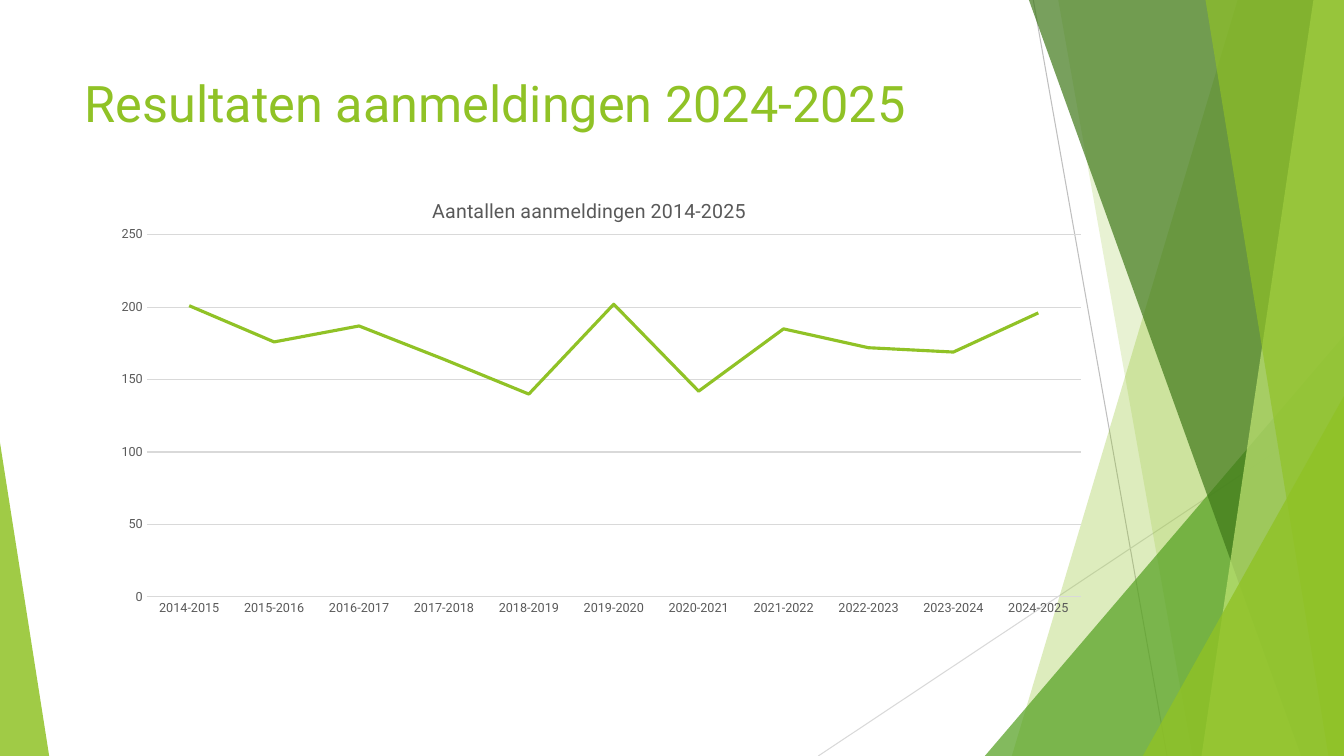
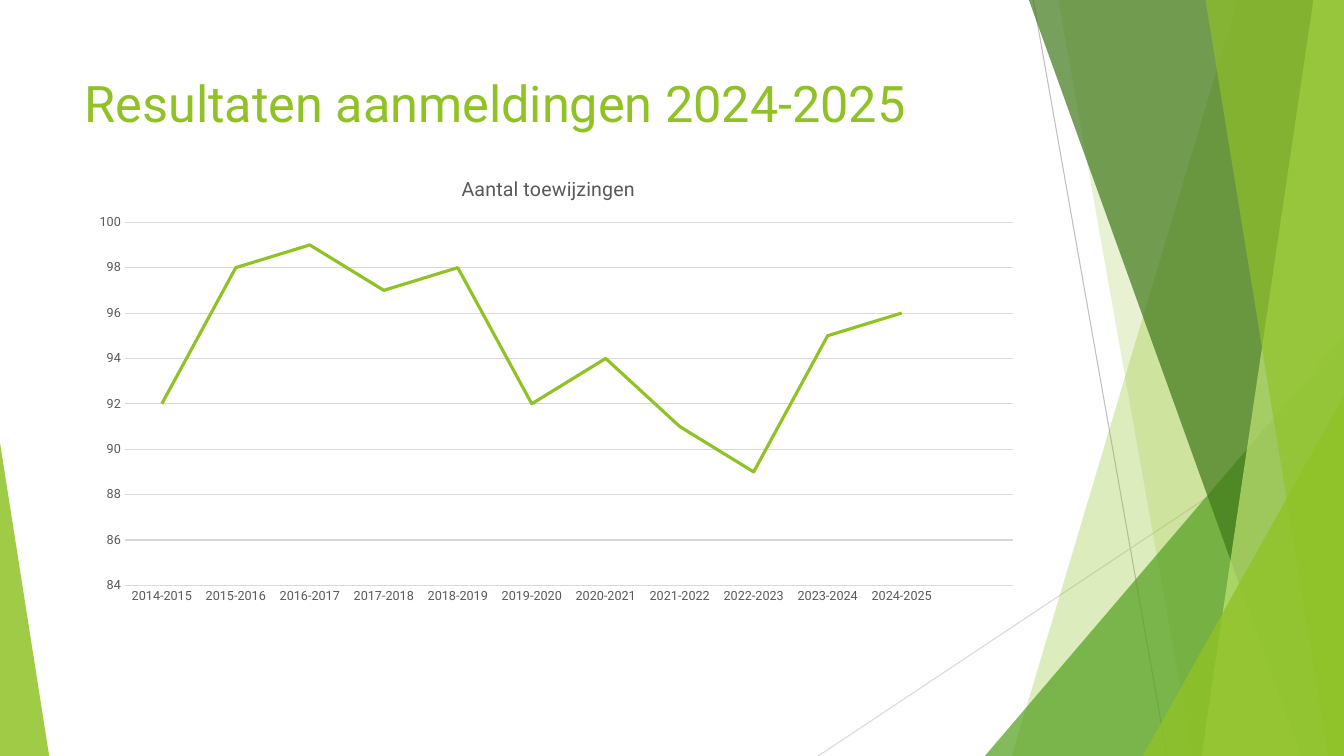
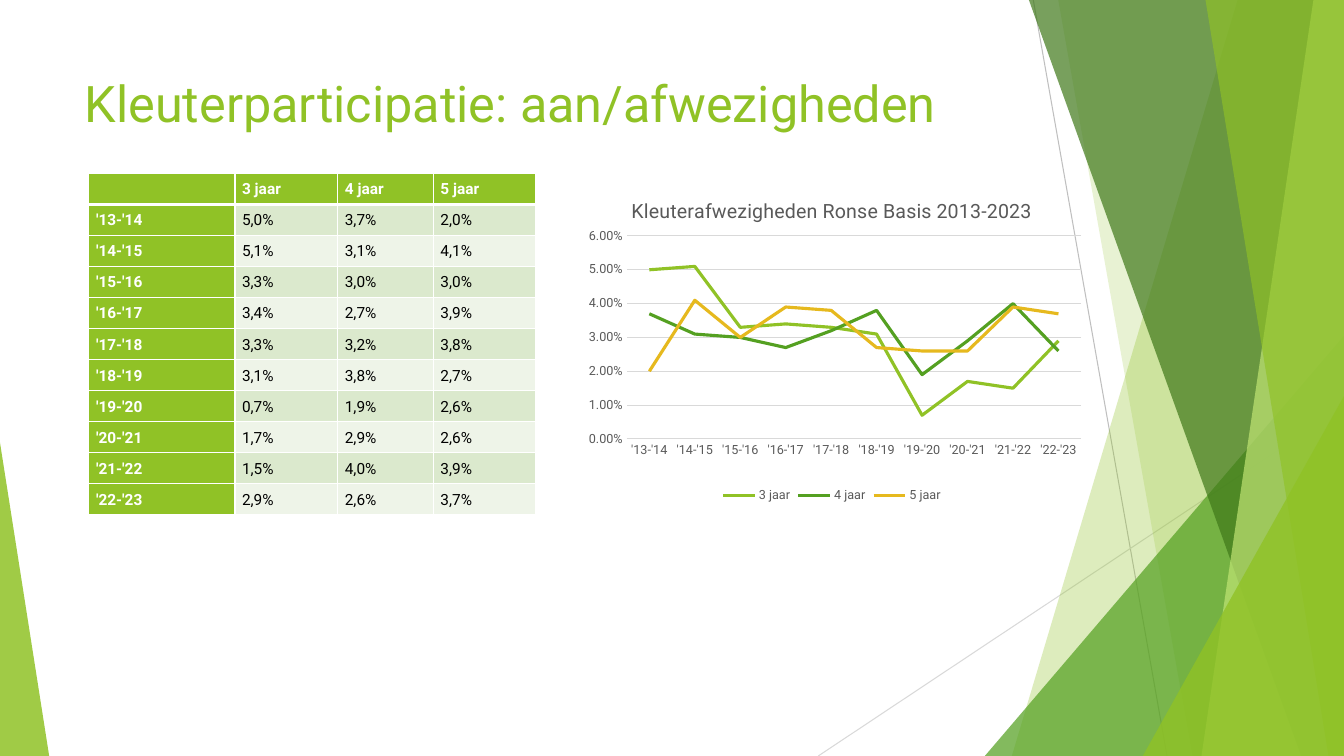
from dataclasses import dataclass
from typing import Optional

from lxml import etree
from pptx import Presentation
from pptx import util as u
from pptx.chart.data import CategoryChartData
from pptx.dml.color import RGBColor
from pptx.enum import chart as ch
from pptx.enum import shapes, text
from pptx.oxml.ns import qn
from pptx.slide import Slide, SlideLayout

FONT = "Roboto"
LIME = RGBColor(0x90, 0xC2, 0x26)
PALE_LIME = RGBColor(0xC0, 0xE4, 0x74)
GREEN = RGBColor(0x54, 0xA0, 0x21)
DARK_GREEN = RGBColor(0x3F, 0x78, 0x19)
GOLD = RGBColor(0xE6, 0xB9, 0x1E)
GREY_TEXT = RGBColor(0x59, 0x59, 0x59)
GREY_LINE = RGBColor(0xD9, 0xD9, 0xD9)
MID_GREY = RGBColor(0xBF, 0xBF, 0xBF)
ROW_DARK = RGBColor(0xDB, 0xE9, 0xCD)
ROW_LIGHT = RGBColor(0xEE, 0xF4, 0xE8)
WHITE = RGBColor(0xFF, 0xFF, 0xFF)
BLACK = RGBColor(0, 0, 0)

WIDTH, HEIGHT = 33.87, 19.05
Box = tuple[float, float, float, float]


@dataclass
class Ray:
    start: tuple[float, float]
    end: tuple[float, float]
    color: RGBColor


@dataclass
class Band:
    """Area from a slanted left side to the right slide edge."""
    top_x: float
    bottom_x: float
    color: RGBColor
    opacity: int


@dataclass
class Wedge:
    """Triangle standing on the bottom edge, its apex left (0) or right (1)."""
    left: float
    top: float
    right: float
    apex: int
    color: RGBColor
    opacity: int


@dataclass
class Series:
    name: str
    values: list[Optional[float]]
    color: RGBColor = LIME


@dataclass
class LineChart:
    title: str
    box: Box
    plot: Box
    categories: list[str]
    series: list[Series]
    scale: tuple[float, float, float]
    number_format: str = "General"
    legend: bool = False


BACKDROP = [
    Ray((26.04, 0), (29.41, HEIGHT), MID_GREY),
    Ray((WIDTH, 10.24), (20.62, HEIGHT), GREY_LINE),
    Band(31.19, 25.5, LIME, 30),
    Band(26.67, 30.05, LIME, 20),
    Wedge(24.82, 8.46, WIDTH, 1, GREEN, 72),
    Band(25.93, 32.79, DARK_GREEN, 70),
    Band(33.1, 30.28, PALE_LIME, 70),
    Band(30.38, 33.48, LIME, 65),
    Wedge(28.8, 9.98, WIDTH, 1, LIME, 80),
    Wedge(0, 11.15, 1.24, 0, LIME, 85),
]

SCHOOL_YEARS = [f"{year}-{year + 1}" for year in range(2014, 2025)]
SHORT_YEARS = [f"'{year}-'{year + 1}" for year in range(13, 23)]

# Absence in percent, by age
ABSENCES = [
    Series("3 jaar", [5.0, 5.1, 3.3, 3.4, 3.3, 3.1, 0.7, 1.7, 1.5, 2.9], LIME),
    Series("4 jaar", [3.7, 3.1, 3.0, 2.7, 3.2, 3.8, 1.9, 2.9, 4.0, 2.6], GREEN),
    Series("5 jaar", [2.0, 4.1, 3.0, 3.9, 3.8, 2.7, 2.6, 2.6, 3.9, 3.7], GOLD),
]

REGISTRATIONS = LineChart(
    "Aantallen aanmeldingen 2014-2025",
    (2.46, 4.52, 24.79, 11.63), (0.05, 0.12, 0.95, 0.785), SCHOOL_YEARS,
    [Series("Aanmeldingen", [201, 176, 187, 164, 140, 202, 142, 185, 172, 169, 196])],
    (0, 250, 50))
ALLOCATIONS = LineChart(
    "Aantal toewijzingen",
    (1.88, 3.96, 23.88, 11.81), (0.053, 0.139, 0.937, 0.775), SCHOOL_YEARS + [""],
    [Series("Aantal toewijzingen", [92, 98, 99, 97, 98, 92, 94, 91, 89, 95, 96, None])],
    (84, 100, 2))
ABSENCE_CHART = LineChart(
    "Kleuterafwezigheden Ronse Basis 2013-2023",
    (14.35, 4.57, 13.23, 8.2), (0.109, 0.168, 0.866, 0.624), SHORT_YEARS,
    [Series(s.name, [round(v / 100, 3) for v in s.values], s.color) for s in ABSENCES],
    (0, 0.06, 0.01), "0.00%", legend=True)


def set_font(font, size: float, color: RGBColor, bold: bool = False) -> None:
    font.name, font.size, font.bold = FONT, u.Pt(size), bold
    font.color.rgb = color


def write(frame, content: str, *, size: float, color: RGBColor, bold: bool = False,
          align=None, line_spacing=None, space_after=None) -> None:
    paragraph = frame.paragraphs[0]
    run = paragraph.add_run()
    run.text = content
    set_font(run.font, size, color, bold)
    if align is not None:
        paragraph.alignment = align
    if line_spacing is not None:
        paragraph.line_spacing = line_spacing
    if space_after is not None:
        paragraph.space_after = u.Pt(space_after)


def draw_ray(slide: Slide, ray: Ray):
    line = slide.shapes.add_connector(
        shapes.MSO_CONNECTOR.STRAIGHT, *map(u.Cm, ray.start + ray.end))
    line.line.color.rgb = ray.color
    line.line.width = u.Pt(0.75)
    etree.SubElement(line.element.spPr, qn("a:effectLst"))
    return line


def draw_area(slide: Slide, part: Band | Wedge):
    if isinstance(part, Band):
        corners = [(WIDTH, 0), (WIDTH, HEIGHT), (part.bottom_x, HEIGHT)]
        outline = slide.shapes.build_freeform(u.Cm(part.top_x), 0)
        outline.add_line_segments([(u.Cm(x), u.Cm(y)) for x, y in corners], close=True)
        area = outline.convert_to_shape()
    else:
        area = slide.shapes.add_shape(
            shapes.MSO_SHAPE.ISOSCELES_TRIANGLE, u.Cm(part.left), u.Cm(part.top),
            u.Cm(part.right - part.left), u.Cm(HEIGHT - part.top))
        area.adjustments[0] = part.apex
    area.shadow.inherit = False
    area.line.fill.background()
    area.fill.solid()
    area.fill.fore_color.rgb = part.color
    color = next(area.element.iter(qn("a:srgbClr")))
    etree.SubElement(color, qn("a:alpha"), val=str(part.opacity * 1000))
    return area


def prepare_layout(layout: SlideLayout) -> None:
    """Keep only the title placeholder and set its place."""
    for placeholder in list(layout.placeholders):
        if placeholder.placeholder_format.type != shapes.PP_PLACEHOLDER.TITLE:
            placeholder.element.getparent().remove(placeholder.element)
    title = layout.placeholders[0]
    title.left, title.top, title.width, title.height = map(u.Cm, (1.88, 1.7, 23.88, 3.66))


def move_backdrop_to_layout(slide: Slide, layout: SlideLayout) -> None:
    title = layout.placeholders[0]
    for part in BACKDROP:
        drawn = draw_ray(slide, part) if isinstance(part, Ray) else draw_area(slide, part)
        title.element.addprevious(drawn.element)


def add_titled_slide(prs, layout: SlideLayout, heading: str) -> Slide:
    slide = prs.slides.add_slide(layout)
    frame = slide.shapes.title.text_frame
    frame.vertical_anchor = text.MSO_ANCHOR.TOP
    frame.auto_size = text.MSO_AUTO_SIZE.NONE
    write(frame, heading, size=36, color=LIME, align=text.PP_ALIGN.LEFT)
    return slide


def set_plot_area(chart, plot: Box) -> None:
    area = next(chart.element.iter(qn("c:plotArea")))
    for old in area.findall(qn("c:layout")):
        area.remove(old)
    layout = etree.Element(qn("c:layout"))
    manual = etree.SubElement(layout, qn("c:manualLayout"))
    settings = [("layoutTarget", "inner"), ("xMode", "edge"), ("yMode", "edge"),
                *zip("xywh", plot)]
    for tag, value in settings:
        etree.SubElement(manual, qn(f"c:{tag}"), val=str(value))
    area.insert(0, layout)


def add_line_chart(slide: Slide, content: LineChart) -> None:
    data = CategoryChartData(number_format=content.number_format)
    data.categories = content.categories
    for series in content.series:
        data.add_series(series.name, series.values)
    chart = slide.shapes.add_chart(
        ch.XL_CHART_TYPE.LINE, *map(u.Cm, content.box), data).chart
    set_font(chart.font, 10, BLACK)
    chart.has_title = True
    write(chart.chart_title.text_frame, content.title, size=14, color=GREY_TEXT)
    set_plot_area(chart, content.plot)

    # Axes
    years, amounts = chart.category_axis, chart.value_axis
    for axis in (years, amounts):
        axis.major_tick_mark = axis.minor_tick_mark = ch.XL_TICK_MARK.NONE
        set_font(axis.tick_labels.font, 9, GREY_TEXT)
    amounts.minimum_scale, amounts.maximum_scale, amounts.major_unit = content.scale
    amounts.tick_labels.number_format = content.number_format
    amounts.tick_labels.number_format_is_linked = False
    amounts.format.line.fill.background()
    amounts.has_major_gridlines = True
    for line in (years.format.line, amounts.major_gridlines.format.line):
        line.color.rgb = GREY_LINE
        line.width = u.Pt(0.75)

    # Series and legend
    chart.plots[0].vary_by_categories = False
    for drawn, series in zip(chart.plots[0].series, content.series):
        drawn.smooth = False
        drawn.marker.style = ch.XL_MARKER_STYLE.NONE
        drawn.format.line.color.rgb = series.color
        drawn.format.line.width = u.Pt(2.25)
    chart.has_legend = content.legend
    if content.legend:
        chart.legend.position = ch.XL_LEGEND_POSITION.BOTTOM
        chart.legend.include_in_layout = False
        set_font(chart.legend.font, 9, GREY_TEXT)


def set_borders(cell, top: float, bottom: float) -> None:
    properties = cell._tc.get_or_add_tcPr()
    for index, (side, points) in enumerate(zip("LRTB", (1, 1, top, bottom))):
        border = etree.Element(qn(f"a:ln{side}"), w=str(u.Pt(points)))
        fill = etree.SubElement(border, qn("a:solidFill"))
        etree.SubElement(fill, qn("a:srgbClr"), val=str(WHITE))
        properties.insert(index, border)


def add_absence_table(slide: Slide) -> None:
    percentages = [[f"{value:.1f}%".replace(".", ",") for value in year]
                   for year in zip(*(s.values for s in ABSENCES))]
    rows = [["", *(s.name for s in ABSENCES)],
            *([year, *values] for year, values in zip(SHORT_YEARS, percentages))]
    widths = [3.68, 2.59, 2.41, 2.57]
    table = slide.shapes.add_table(
        len(rows), len(widths), u.Cm(2.24), u.Cm(4.37),
        u.Cm(sum(widths)), u.Cm(8.61)).table
    for column, width in zip(table.columns, widths):
        column.width = u.Cm(width)
    for r, row in enumerate(rows):
        for c, content in enumerate(row):
            cell = table.cell(r, c)
            heading = r == 0 or c == 0
            cell.fill.solid()
            cell.fill.fore_color.rgb = (
                LIME if heading else ROW_DARK if r % 2 else ROW_LIGHT)
            set_borders(cell, top=3 if r == 1 else 1, bottom=3 if r == 0 else 1)
            cell.vertical_anchor = text.MSO_ANCHOR.MIDDLE
            cell.margin_left = cell.margin_right = u.Cm(0.18)
            cell.margin_top = cell.margin_bottom = 0
            if content:
                write(cell.text_frame, content, size=11, bold=heading,
                      color=WHITE if heading else BLACK,
                      line_spacing=1.07, space_after=8)


def main() -> None:
    prs = Presentation()
    prs.slide_width, prs.slide_height = u.Cm(WIDTH), u.Cm(HEIGHT)
    layout = prs.slide_layouts[5]
    prepare_layout(layout)

    # Registrations
    registrations = add_titled_slide(prs, layout, "Resultaten aanmeldingen 2024-2025")
    move_backdrop_to_layout(registrations, layout)
    add_line_chart(registrations, REGISTRATIONS)

    # Allocations
    allocations = add_titled_slide(prs, layout, "Resultaten aanmeldingen 2024-2025")
    add_line_chart(allocations, ALLOCATIONS)

    # Absences
    absences = add_titled_slide(prs, layout, "Kleuterparticipatie: aan/afwezigheden")
    add_absence_table(absences)
    add_line_chart(absences, ABSENCE_CHART)

    prs.save("out.pptx")


if __name__ == "__main__":
    main()
